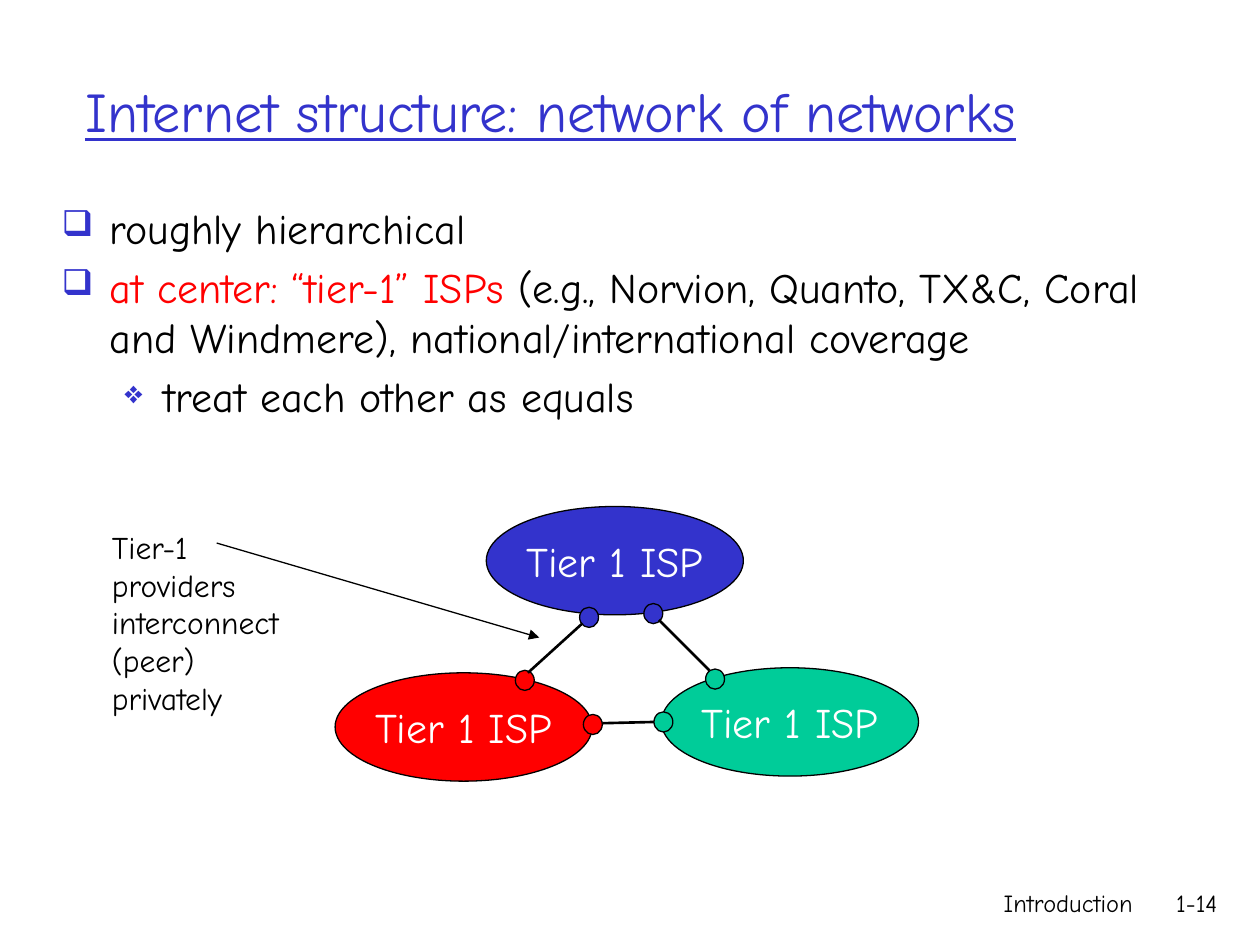
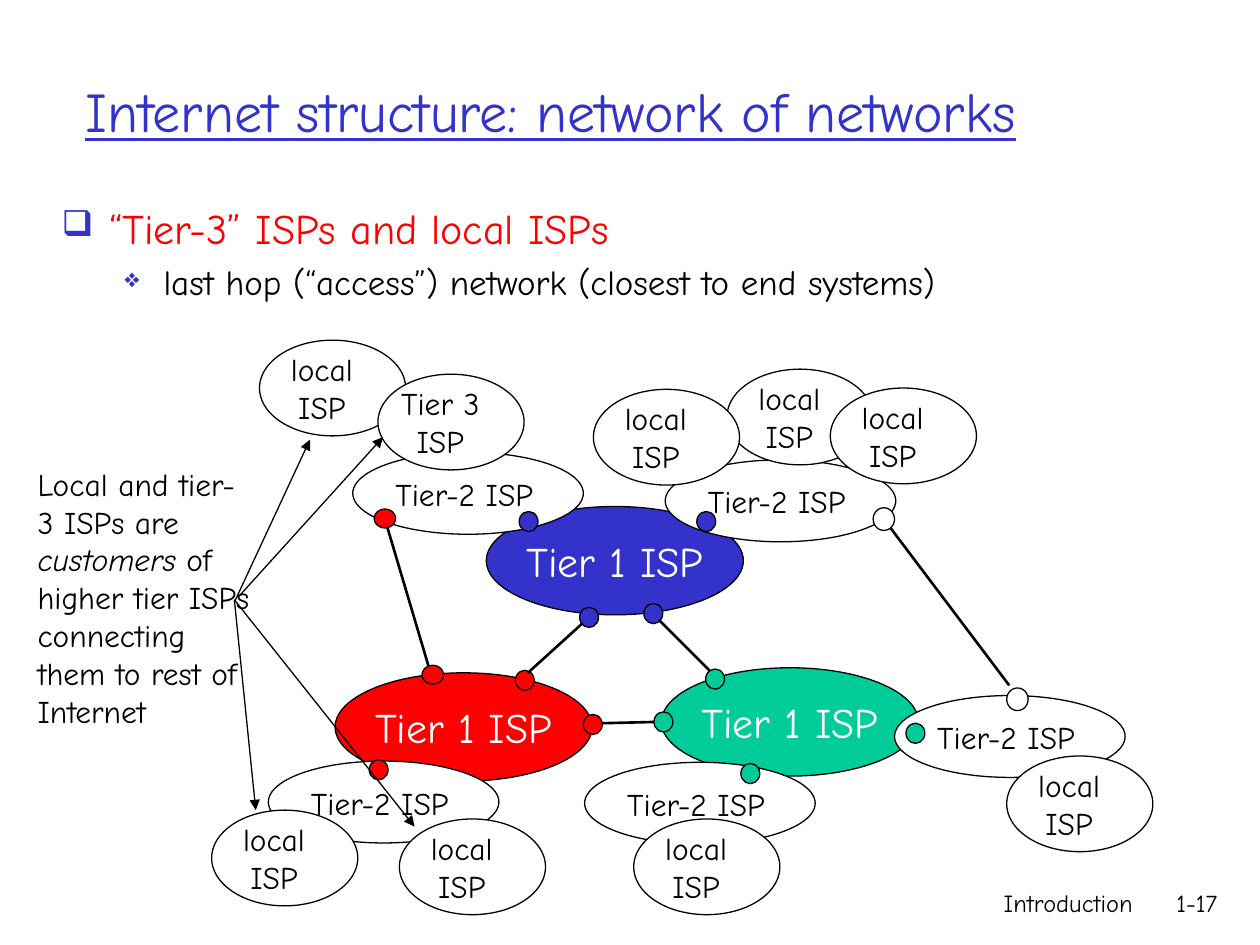
from dataclasses import dataclass

from lxml import etree
from pptx import Presentation
from pptx.dml.color import RGBColor
from pptx.enum.shapes import MSO_CONNECTOR, MSO_SHAPE
from pptx.enum.text import MSO_ANCHOR, PP_ALIGN
from pptx.oxml.ns import qn
from pptx.util import Inches, Pt

OVAL = MSO_SHAPE.OVAL
STRAIGHT = MSO_CONNECTOR.STRAIGHT
TOP, MIDDLE = MSO_ANCHOR.TOP, MSO_ANCHOR.MIDDLE
LEFT, CENTER, RIGHT = PP_ALIGN.LEFT, PP_ALIGN.CENTER, PP_ALIGN.RIGHT


@dataclass(frozen=True)
class Theme:
    font: str = "Comic Neue"
    blue: str = "3333CC"
    red: str = "FF0000"
    green: str = "00CC99"
    black: str = "000000"
    white: str = "FFFFFF"
    title: int = 32
    body: int = 24
    sub: int = 20
    label: int = 18
    footer: int = 14
    thin: float = 0.75
    thick: float = 1.5


T = Theme()
TITLE = "Internet structure: network of networks"

# Bullet levels: character, size in percent, left margin, first-line indent
BULLETS = [("❑", 85, 0.38, -0.38), ("❖", 75, 0.81, -0.31)]

# Ellipse sizes by kind of network
TIER1_SIZE = (2.04, 0.86)
TIER2_SIZE = (1.83, 0.65)
LOCAL_SIZE = (1.16, 0.76)
DOT_SIZE = (0.15, 0.16)
WIDE_DOT = (0.17, 0.15)
BIG_DOT = (0.17, 0.18)


# ---- Text ----
def add_run(p, text, size, color=T.black, underline=False, italic=False):
    r = p.add_run()
    r.text = text
    font = r.font
    font.name, font.size = T.font, Pt(size)
    font.color.rgb = RGBColor.from_string(color)
    font.underline, font.italic = underline, italic


def next_paragraph(tf, index, align=LEFT):
    p = tf.paragraphs[0] if index == 0 else tf.add_paragraph()
    p.alignment = align
    return p


def add_text(slide, box, paragraphs, size, align=LEFT, anchor=TOP):
    """Each paragraph is a list of (text, run options)."""
    tf = slide.shapes.add_textbox(*map(Inches, box)).text_frame
    tf.word_wrap = True
    tf.vertical_anchor = anchor
    for i, runs in enumerate(paragraphs):
        p = next_paragraph(tf, i, align)
        for text, options in runs:
            add_run(p, text, size, **options)
    return tf


def set_bullet(p, level):
    char, percent, margin, indent = BULLETS[level]
    pPr = p._p.get_or_add_pPr()
    pPr.set("marL", str(Inches(margin)))
    pPr.set("indent", str(Inches(indent)))
    color = etree.SubElement(pPr, qn("a:buClr"))
    etree.SubElement(color, qn("a:srgbClr"), val=T.blue)
    etree.SubElement(pPr, qn("a:buSzPct"), val=str(percent * 1000))
    etree.SubElement(pPr, qn("a:buChar"), char=char)


def add_bullets(slide, height, items):
    """Each item is (level, size, [(text, color), ...])."""
    tf = add_text(slide, (0.39, 1.56, 9.23, height), [], T.body)
    for i, (level, size, runs) in enumerate(items):
        p = next_paragraph(tf, i)
        p.space_before = Pt(0.2 * size)
        set_bullet(p, level)
        for text, color in runs:
            add_run(p, text, size, color)


# ---- Shapes and lines ----
def add_ellipse(slide, x, y, size, fill, text=None):
    sp = slide.shapes.add_shape(OVAL, *map(Inches, (x, y, *size)))
    sp.shadow.inherit = False
    sp.fill.solid()
    sp.fill.fore_color.rgb = RGBColor.from_string(fill)
    sp.line.color.rgb = RGBColor.from_string(T.black)
    sp.line.width = Pt(T.thin)
    if text:
        tf = sp.text_frame
        tf.word_wrap = False
        tf.vertical_anchor = MIDDLE
        add_run(next_paragraph(tf, 0, CENTER), text, T.body, T.white)


def add_line(slide, start, end, width=T.thick, arrow=False):
    line = slide.shapes.add_connector(STRAIGHT, *map(Inches, (*start, *end)))
    line.line.color.rgb = RGBColor.from_string(T.black)
    line.line.width = Pt(width)
    spPr = line._element.spPr
    if arrow:
        etree.SubElement(spPr.find(qn("a:ln")), qn("a:tailEnd"), type="triangle")
    etree.SubElement(spPr, qn("a:effectLst"))


# ---- Networks ----
def add_tier2(slide, x, y):
    add_ellipse(slide, x, y, TIER2_SIZE, T.white)
    add_text(slide, (x + 0.24, y + 0.13, 1.47, 0.4), [[("Tier-2 ISP", {})]], T.label)


def add_small_isp(slide, x, y, name="local"):
    add_ellipse(slide, x, y, LOCAL_SIZE, T.white)
    add_text(slide, (x + 0.03, y + 0.03, 0.93, 0.7),
             [[(name, {})], [("ISP", {})]], T.label, CENTER)


def add_tier1_core(slide):
    for x, y, fill in [(2.66, 5.34, T.red), (3.86, 4.02, T.blue), (5.25, 5.3, T.green)]:
        add_ellipse(slide, x, y, TIER1_SIZE, fill, "Tier 1 ISP")
    for x, y, fill in [(5.6, 5.31, T.green), (5.11, 4.79, T.blue), (4.6, 4.82, T.blue),
                       (4.09, 5.32, T.red), (4.63, 5.67, T.red), (5.19, 5.65, T.green)]:
        add_ellipse(slide, x, y, DOT_SIZE, fill)
    for start, end in [((4.78, 5.74), (5.19, 5.73)), ((5.23, 4.92), (5.63, 5.32)),
                       ((4.19, 5.34), (4.62, 4.95))]:
        add_line(slide, start, end)


# ---- Slides ----
def add_base_slide(prs, number):
    slide = prs.slides.add_slide(prs.slide_layouts[6])
    add_text(slide, (5.92, 7, 3.17, 0.5), [[("Introduction", {})]], T.footer, RIGHT)
    add_text(slide, (9.08, 7, 0.68, 0.5), [[(number, {})]], T.footer, RIGHT)
    add_text(slide, (0.58, 0.25, 8.85, 1.25),
             [[(TITLE, {"color": T.blue, "underline": True})]], T.title, anchor=MIDDLE)
    return slide


def build_tier1_slide(prs):
    slide = add_base_slide(prs, "1-14")
    add_bullets(slide, 5.08, [
        (0, T.body, [("roughly hierarchical", T.black)]),
        (0, T.body, [("at center: “tier-1” ISPs ", T.red),
                     ("(e.g., Norvion, Quanto, TX&C, Coral and Windmere), "
                      "national/international coverage", T.black)]),
        (1, T.body, [("treat each other as equals", T.black)]),
    ])
    add_tier1_core(slide)
    add_text(slide, (0.79, 4.14, 1.71, 1.6),
             [[("Tier-1 providers interconnect (peer) privately", {})]], T.label)
    add_line(slide, (1.72, 4.31), (4.28, 5.06), T.thin, arrow=True)


def build_tier3_slide(prs):
    slide = add_base_slide(prs, "1-17")
    add_bullets(slide, 1, [
        (0, T.body, [("“Tier-3” ISPs and local ISPs", T.red)]),
        (1, T.sub, [("last hop (“access”) network (closest to end systems)", T.black)]),
    ])
    add_tier1_core(slide)

    # Tier-2 networks, each with its dot on a tier-1 network
    for x, y, dot_x, dot_y, fill in [
            (5.28, 3.65, 5.53, 4.06, T.blue), (2.8, 3.59, 4.12, 4.06, T.blue),
            (2.13, 6.04, 2.93, 6.03, T.red), (4.64, 6.05, 5.88, 6.06, T.green),
            (7.1, 5.52, 7.19, 5.74, T.green)]:
        add_tier2(slide, x, y)
        add_ellipse(slide, dot_x, dot_y, DOT_SIZE, fill)

    # Further links of the tier-2 networks
    for dots, size, fill, start, end in [
            ([(2.97, 4.04), (3.35, 5.28)], WIDE_DOT, T.red, (3.07, 4.17), (3.42, 5.35)),
            ([(6.93, 4.03), (7.99, 5.46)], BIG_DOT, T.white, (7.06, 4.18), (8.01, 5.44))]:
        add_line(slide, start, end)
        for x, y in dots:
            add_ellipse(slide, x, y, size, fill)

    # Local and tier-3 networks
    for x, y, name in [
            (5.77, 2.93, "local"), (4.71, 3.09, "local"), (6.59, 3.08, "local"),
            (1.68, 6.43, "local"), (2.06, 2.7, "local"), (3, 2.97, "Tier 3"),
            (3.17, 6.5, "local"), (5.03, 6.5, "local"), (7.99, 6, "local")]:
        add_small_isp(slide, x, y, name)

    # Remark with arrows to the customers
    add_text(slide, (0.2, 3.64, 1.97, 2.5), [
        [("Local and tier- 3 ISPs are ", {}), ("customers", {"italic": True}), (" of", {})],
        [("higher tier ISPs", {})],
        [("connecting them to rest of Internet", {})],
    ], T.label)
    for start, end in [((1.86, 4.78), (2.46, 3.49)), ((1.89, 4.74), (3.04, 3.47)),
                       ((1.86, 4.76), (2.03, 6.43)), ((1.86, 4.76), (3.29, 6.56))]:
        add_line(slide, start, end, T.thin, arrow=True)


def main():
    prs = Presentation()
    prs.slide_width, prs.slide_height = Inches(10), Inches(7.5)
    build_tier1_slide(prs)
    build_tier3_slide(prs)
    prs.save("out.pptx")


if __name__ == "__main__":
    main()
